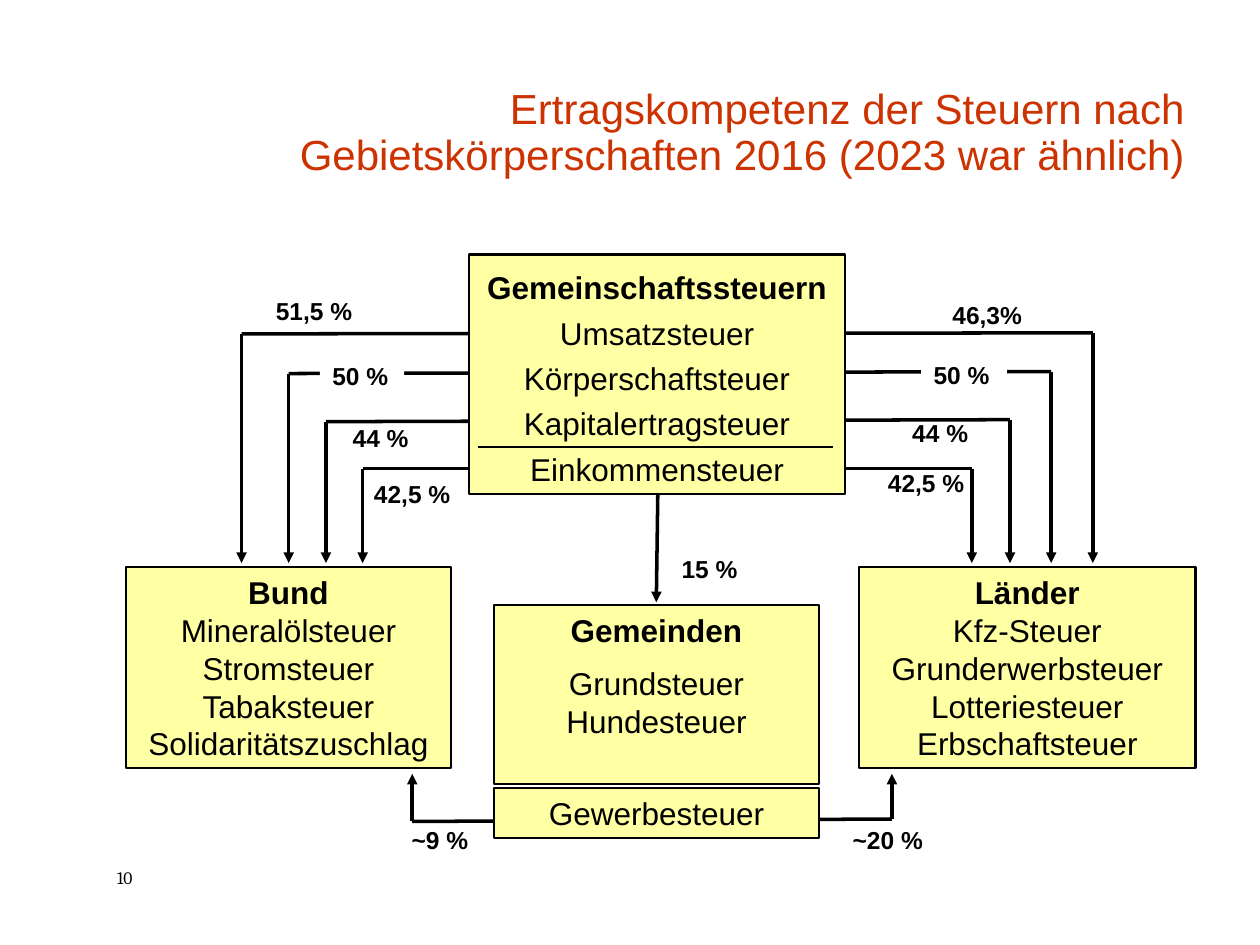
from dataclasses import dataclass

from lxml import etree
from pptx import Presentation
from pptx.dml.color import RGBColor
from pptx.enum.shapes import MSO_CONNECTOR, MSO_SHAPE
from pptx.enum.text import MSO_ANCHOR, PP_ALIGN
from pptx.oxml.ns import qn
from pptx.util import Cm, Pt

STRAIGHT = MSO_CONNECTOR.STRAIGHT
RECTANGLE = MSO_SHAPE.RECTANGLE
TOP, BOTTOM = MSO_ANCHOR.TOP, MSO_ANCHOR.BOTTOM
LEFT, CENTER, RIGHT = PP_ALIGN.LEFT, PP_ALIGN.CENTER, PP_ALIGN.RIGHT


@dataclass(frozen=True)
class Theme:
    black: RGBColor = RGBColor(0x00, 0x00, 0x00)
    white: RGBColor = RGBColor(0xFF, 0xFF, 0xFF)
    title: RGBColor = RGBColor(0xCC, 0x33, 0x00)
    box: RGBColor = RGBColor(0xFF, 0xFF, 0xA3)
    font: str = "Arial"
    number_font: str = "Cambria"
    title_size: float = 24
    box_size: float = 18
    label_size: float = 14
    number_size: float = 10
    border: float = 1.25
    divider: float = 1.2
    arrow: float = 2


THEME = Theme()


# All positions and sizes below are in centimetres.
@dataclass(frozen=True)
class TaxBox:
    left: float
    top: float
    width: float
    height: float
    heading: str
    taxes: tuple[str, ...]
    line_spacing: float = 1.0
    separate_heading: bool = False


@dataclass(frozen=True)
class Label:
    text: str
    left: float
    top: float
    width: float
    filled: bool = False


@dataclass(frozen=True)
class Flow:
    """A pair of bent arrows leaving the central column on both sides."""
    left: float
    left_y: float
    right: float
    right_y: float
    tip: float


BOXES = (
    TaxBox(9.45, 5.13, 7.59, 4.83, "Gemeinschaftssteuern",
           ("Umsatzsteuer", "Körperschaftsteuer", "Kapitalertragsteuer",
            "Einkommensteuer"), line_spacing=1.2),
    TaxBox(2.54, 11.43, 6.55, 4.06, "Bund",
           ("Mineralölsteuer", "Stromsteuer", "Tabaksteuer",
            "Solidaritätszuschlag")),
    TaxBox(9.96, 12.19, 6.55, 3.61, "Gemeinden",
           ("Grundsteuer", "Hundesteuer"), separate_heading=True),
    TaxBox(17.32, 11.43, 6.78, 4.06, "Länder",
           ("Kfz-Steuer", "Grunderwerbsteuer", "Lotteriesteuer",
            "Erbschaftsteuer")),
    TaxBox(9.96, 15.88, 6.55, 1.02, "", ("Gewerbesteuer",)),
)

SHARED_TIP = 11.35
FLOWS = (
    Flow(4.87, 6.73, 22.03, 6.71, SHARED_TIP),
    Flow(5.82, 7.53, 21.19, 7.49, SHARED_TIP),
    Flow(6.57, 8.5, 20.36, 8.46, SHARED_TIP),
    Flow(7.31, 9.45, 19.59, 9.45, SHARED_TIP),
    Flow(8.31, 16.56, 17.98, 16.51, 15.6),
)

LABELS = (
    Label("51,5 %", 5.31, 5.84, 2.72),
    Label("50 %", 6.45, 7.16, 1.7, filled=True),
    Label("44 %", 6.86, 8.41, 1.91),
    Label("42,5 %", 7.29, 9.53, 2.57),
    Label("46,3%", 18.95, 5.92, 2.62),
    Label("50 %", 18.57, 7.14, 1.73, filled=True),
    Label("44 %", 18.14, 8.31, 1.91),
    Label("42,5 %", 17.65, 9.32, 2.11),
    Label("15 %", 13.49, 11.05, 2.11),
    Label("~9 %", 8.05, 16.51, 1.91),
    Label("~20 %", 16.94, 16.51, 2.62),
)
LABEL_HEIGHT = 0.84


def format_run(run, size: float, color: RGBColor = THEME.black,
               bold: bool = False, font: str = THEME.font) -> None:
    run.font.name = font
    run.font.size = Pt(size)
    run.font.bold = bold
    run.font.color.rgb = color


def add_text(slide, text: str, left: float, top: float, width: float,
             height: float, size: float, color: RGBColor = THEME.black,
             bold: bool = False, font: str = THEME.font, align=LEFT,
             anchor=TOP, line_spacing: float = 1.0):
    shape = slide.shapes.add_textbox(Cm(left), Cm(top), Cm(width), Cm(height))
    frame = shape.text_frame
    frame.word_wrap = True
    frame.vertical_anchor = anchor
    frame.text = text
    paragraph = frame.paragraphs[0]
    paragraph.alignment = align
    paragraph.line_spacing = line_spacing
    format_run(paragraph.runs[0], size, color, bold, font)
    return shape


def add_label(slide, label: Label) -> None:
    shape = add_text(slide, label.text, label.left, label.top, label.width,
                     LABEL_HEIGHT, THEME.label_size, bold=True)
    if label.filled:
        shape.fill.solid()
        shape.fill.fore_color.rgb = THEME.white


def add_box(slide, box: TaxBox) -> None:
    shape = slide.shapes.add_shape(RECTANGLE, Cm(box.left), Cm(box.top),
                                   Cm(box.width), Cm(box.height))
    shape.shadow.inherit = False
    shape.fill.solid()
    shape.fill.fore_color.rgb = THEME.box
    shape.line.color.rgb = THEME.black
    shape.line.width = Pt(THEME.border)
    frame = shape.text_frame
    frame.word_wrap = True
    frame.vertical_anchor = TOP
    # "\n" starts a paragraph, "\v" breaks the line inside one
    heading_end = "\n" if box.separate_heading else "\v"
    heading = box.heading + heading_end if box.heading else ""
    frame.text = heading + "\v".join(box.taxes)
    for index, paragraph in enumerate(frame.paragraphs):
        paragraph.alignment = CENTER
        paragraph.line_spacing = box.line_spacing
        if index > 0:
            paragraph.space_before = Pt(9)
        for run in paragraph.runs:
            format_run(run, THEME.box_size,
                       bold=run.text == box.heading)


def add_line(slide, start: tuple[float, float], end: tuple[float, float],
             width: float = THEME.arrow, arrowhead: bool = False) -> None:
    line = slide.shapes.add_connector(STRAIGHT, Cm(start[0]), Cm(start[1]),
                                      Cm(end[0]), Cm(end[1]))
    line.line.color.rgb = THEME.black
    line.line.width = Pt(width)
    if arrowhead:
        etree.SubElement(line.line._get_or_add_ln(), qn("a:tailEnd"),
                         type="triangle")
    etree.SubElement(line._element.spPr, qn("a:effectLst"))


def main() -> None:
    presentation = Presentation()
    presentation.slide_width, presentation.slide_height = Cm(25.4), Cm(19.05)
    slide = presentation.slides.add_slide(presentation.slide_layouts[6])

    # Page number and title
    add_text(slide, "10", 2.11, 17.35, 1.7, 0.74, THEME.number_size,
             font=THEME.number_font)
    add_text(slide, "Ertragskompetenz der Steuern nach "
             "Gebietskörperschaften 2016 (2023 war ähnlich)",
             5.31, 1.07, 18.82, 2.67, THEME.title_size, THEME.title,
             align=RIGHT, anchor=BOTTOM, line_spacing=0.9)

    # Horizontal lines run behind the boxes
    add_line(slide, (13.26, 9.98), (13.23, 12.14), arrowhead=True)
    for flow in FLOWS:
        add_line(slide, (flow.left, flow.left_y), (flow.right, flow.right_y))

    # Boxes, shares and the rule above the income tax
    for box in BOXES:
        add_box(slide, box)
    for label in LABELS:
        add_label(slide, label)
    add_line(slide, (9.63, 9.02), (16.79, 9.02), THEME.divider)

    # Vertical arrows to the recipients
    for flow in FLOWS:
        for x, y in ((flow.left, flow.left_y), (flow.right, flow.right_y)):
            add_line(slide, (x, y), (x, flow.tip), arrowhead=True)

    presentation.save("out.pptx")


if __name__ == "__main__":
    main()
